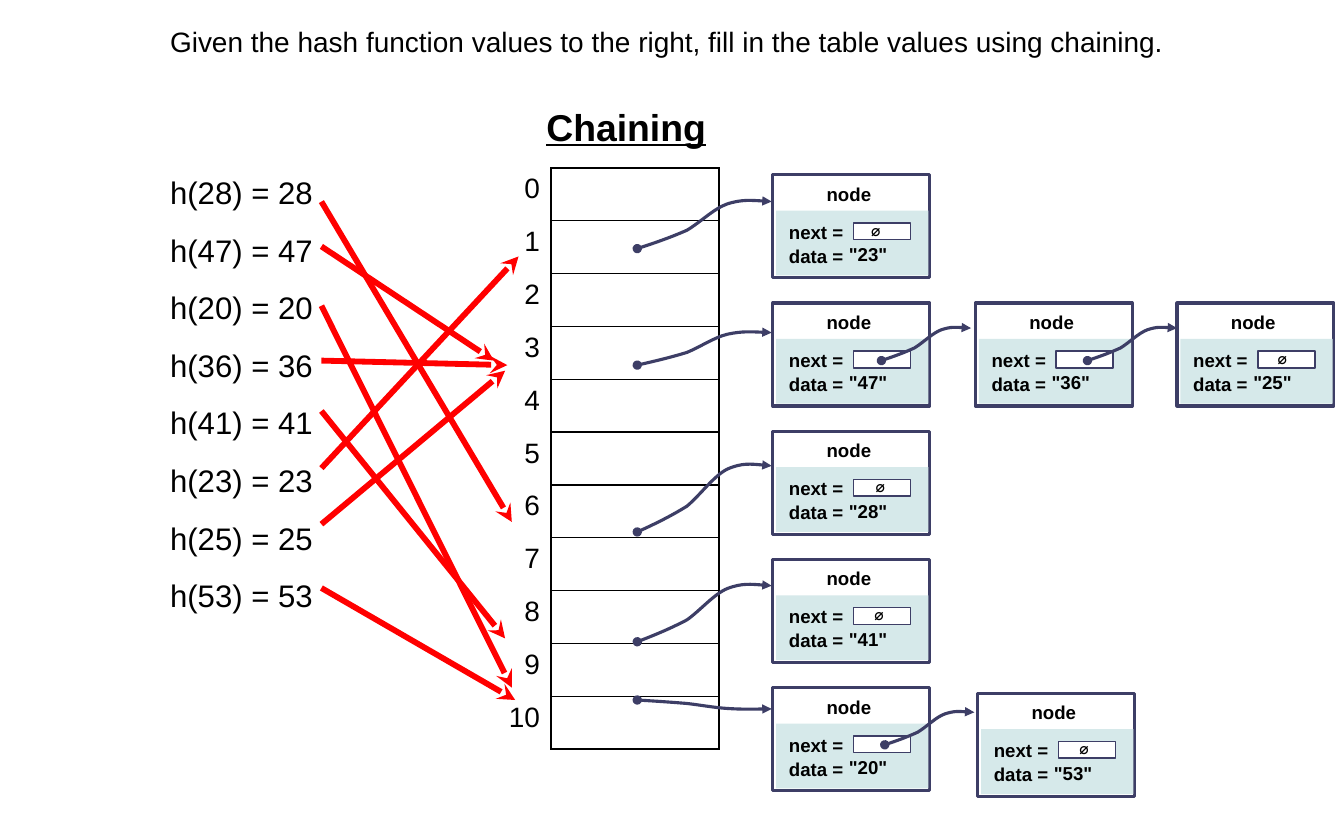
from dataclasses import dataclass
from typing import Optional

from lxml import etree
from pptx import Presentation
from pptx.dml.color import RGBColor
from pptx.enum.shapes import MSO_CONNECTOR, MSO_SHAPE
from pptx.enum.text import PP_ALIGN
from pptx.oxml.ns import qn
from pptx.util import Inches, Pt

RECT, STRAIGHT = MSO_SHAPE.RECTANGLE, MSO_CONNECTOR.STRAIGHT
LEFT, CENTER, RIGHT = PP_ALIGN.LEFT, PP_ALIGN.CENTER, PP_ALIGN.RIGHT
BLACK, WHITE, NAVY, TEAL, RED = "000000", "FFFFFF", "3D3E66", "D6E9EA", "FF0000"
BOLD = {"size": Pt(12), "bold": True}
NODE_W, NODE_H = 1.4, 0.92
BUCKETS, BUCKET_H = 11, 5.19 / 11
CURVE = ((0.13, 0.12), (0.25, 0.24), (0.37, 0.39), (0.47, 0.56), (0.57, 0.85),
         (0.67, 0.95), (0.78, 1.05), (0.89, 1.02), (1, 1))


@dataclass
class Node:
    value: int
    x: float
    y: float
    null_dx: Optional[float] = None


@dataclass
class Arrow:
    x1: float
    y1: float
    x2: float
    y2: float


def row_top(row):
    return 1.56 + 1.145 * row


KEYS = (28, 47, 20, 36, 41, 23, 25, 53)
NODES = (
    Node(23, 6.9, row_top(0), 0.78),
    Node(47, 6.9, row_top(1)),
    Node(36, 8.71, row_top(1)),
    Node(25, 10.51, row_top(1), 0.8),
    Node(28, 6.9, row_top(2), 0.82),
    Node(41, 6.9, row_top(3), 0.81),
    Node(20, 6.9, row_top(4)),
    Node(53, 8.73, 6.19, 0.81),
)
LINKS = (
    Arrow(5.69, 2.22, 6.89, 1.8),
    Arrow(5.69, 3.26, 6.89, 2.97),
    Arrow(5.69, 4.75, 6.89, 4.16),
    Arrow(5.69, 5.73, 6.89, 5.23),
    Arrow(5.69, 6.25, 6.89, 6.33),
    Arrow(7.87, 3.22, 8.67, 2.93),
    Arrow(9.71, 3.22, 10.51, 2.93),
    Arrow(7.9, 6.65, 8.7, 6.36),
)
HASHES = (
    Arrow(2.87, 1.8, 4.57, 4.66),
    Arrow(2.87, 2.2, 4.41, 3.22),
    Arrow(2.87, 2.73, 4.57, 6.14),
    Arrow(2.87, 3.22, 4.53, 3.26),
    Arrow(2.87, 3.67, 4.51, 5.7),
    Arrow(2.87, 4.18, 4.63, 2.29),
    Arrow(2.87, 4.68, 4.51, 3.31),
    Arrow(2.87, 5.25, 4.6, 6.25),
)


def rgb(value: str) -> RGBColor:
    return RGBColor.from_string(value)


def write(tf, lines, fmt: dict, align=LEFT, gap: float = 0) -> None:
    for i, line in enumerate(lines):
        p = tf.add_paragraph() if i else tf.paragraphs[0]
        p.alignment = align
        if i and gap:
            p.space_before = Pt(gap)
        r = p.add_run()
        r.text = line
        r.font.color.rgb = rgb(BLACK)
        for key, value in {"name": "Arial", **fmt}.items():
            setattr(r.font, key, value)


def add_text(shapes, x: float, y: float, w: float, h: float, lines, fmt: dict,
             align=LEFT, gap: float = 0, inset: bool = True, wrap: bool = True) -> None:
    tf = shapes.add_textbox(Inches(x), Inches(y), Inches(w), Inches(h)).text_frame
    tf.word_wrap = wrap
    if not inset:
        for side in ("left", "top", "right", "bottom"):
            setattr(tf, f"margin_{side}", 0)
    write(tf, lines, fmt, align, gap)


def add_rect(shapes, x: float, y: float, w: float, h: float, fill: str,
             line_width: float = 0) -> None:
    sp = shapes.add_shape(RECT, Inches(x), Inches(y), Inches(w), Inches(h))
    sp.shadow.inherit = False
    sp.fill.solid()
    sp.fill.fore_color.rgb = rgb(fill)
    if line_width:
        sp.line.color.rgb = rgb(NAVY)
        sp.line.width = Pt(line_width)
    else:
        sp.line.fill.background()


def style_arrow(sp, color: str, width: float, ends: dict) -> None:
    sp.line.color.rgb = rgb(color)
    sp.line.width = Pt(width)
    ln = sp.line._get_or_add_ln()
    for tag, kind in ends.items():
        etree.SubElement(ln, qn(f"a:{tag}"), type=kind)


def add_link(shapes, a: Arrow) -> None:
    points = [(Inches(a.x1 + (a.x2 - a.x1) * fx), Inches(a.y1 + (a.y2 - a.y1) * fy))
              for fx, fy in CURVE]
    builder = shapes.build_freeform(Inches(a.x1), Inches(a.y1))
    builder.add_line_segments(points, close=False)
    sp = builder.convert_to_shape()
    sp.shadow.inherit = False
    sp.fill.background()
    segments = list(sp._element.iter(qn("a:lnTo")))
    outline = segments[0].getparent()
    for i in range(0, len(segments), 3):
        bezier = etree.SubElement(outline, qn("a:cubicBezTo"))
        for segment in segments[i:i + 3]:
            bezier.append(segment[0])
            outline.remove(segment)
    style_arrow(sp, NAVY, 2, {"headEnd": "oval", "tailEnd": "triangle"})


def add_hash_arrow(shapes, a: Arrow) -> None:
    sp = shapes.add_connector(STRAIGHT, Inches(a.x1), Inches(a.y1), Inches(a.x2), Inches(a.y2))
    style_arrow(sp, RED, 3.75, {"tailEnd": "stealth"})
    etree.SubElement(sp._element.spPr, qn("a:effectLst"))


def add_node(shapes, n: Node) -> None:
    group = shapes.add_group_shape().shapes
    x, y = n.x, n.y
    add_rect(group, x, y, NODE_W, NODE_H, WHITE, 2)
    add_rect(group, x + 0.03, y + 0.32, 1.36, 0.58, TEAL)
    add_text(group, x + 0.03, y + 0.41, 0.6, 0.4, ("next =", "data ="), BOLD, RIGHT, 1, inset=False)
    add_rect(group, x + 0.72, y + 0.43, 0.51, 0.15, WHITE, 1)
    add_text(group, x + 0.68, y + 0.61, 0.6, 0.2, (f'"{n.value}"',), BOLD, inset=False)
    add_text(group, x + 0.38, y + 0.07, 0.6, 0.2, ("node",), BOLD, CENTER, inset=False)
    if n.null_dx is not None:
        fmt = {"name": "DejaVu Sans Mono", "size": Pt(10), "bold": True}
        add_text(group, x + n.null_dx, y + 0.37, 0.33, 0.27, ("∅",), fmt, wrap=False)


def set_borders(cell, sides: str) -> None:
    tcPr = cell._tc.get_or_add_tcPr()
    for i, side in enumerate(sides):
        ln = etree.Element(qn(f"a:ln{side}"), w=str(Pt(1)))
        fill = etree.SubElement(ln, qn("a:solidFill"))
        etree.SubElement(fill, qn("a:srgbClr"), val=BLACK)
        tcPr.insert(i, ln)


def add_buckets(shapes) -> None:
    table = shapes.add_table(BUCKETS, 2, Inches(4.42), Inches(1.5), Inches(2),
                             Inches(BUCKETS * BUCKET_H)).table
    table.first_row = table.horz_banding = False
    for column, width in zip(table.columns, (0.5, 1.5)):
        column.width = Inches(width)
    for i, row in enumerate(table.rows):
        row.height = Inches(BUCKET_H)
        for cell, sides in zip(row.cells, ("R", "LRTB")):
            cell.fill.solid()
            cell.fill.fore_color.rgb = rgb(WHITE)
            set_borders(cell, sides)
        write(row.cells[0].text_frame, (str(i),), {"size": Pt(18)}, RIGHT)


def main() -> None:
    """Build the hash table chaining slide."""
    prs = Presentation()
    prs.slide_width, prs.slide_height = Inches(12), Inches(7.5)
    s = prs.slides.add_slide(prs.slide_layouts[6])
    add_buckets(s.shapes)
    add_text(s.shapes, 1.42, 1.5, 3.5, 3.97, [f"h({k}) = {k}" for k in KEYS],
             {"size": Pt(20)}, gap=13)
    question = "Given the hash function values to the right, fill in the table values using chaining."
    add_text(s.shapes, 1.42, 0.17, 9.33, 0.4, (question,), {"size": Pt(18)})
    add_text(s.shapes, 4.78, 0.88, 1.64, 0.5, ("Chaining",),
             {"size": Pt(24), "bold": True, "underline": True}, wrap=False)
    for node in NODES:
        add_node(s.shapes, node)
    for link in LINKS:
        add_link(s.shapes, link)
    for arrow in HASHES:
        add_hash_arrow(s.shapes, arrow)
    prs.save("out.pptx")


if __name__ == "__main__":
    main()
